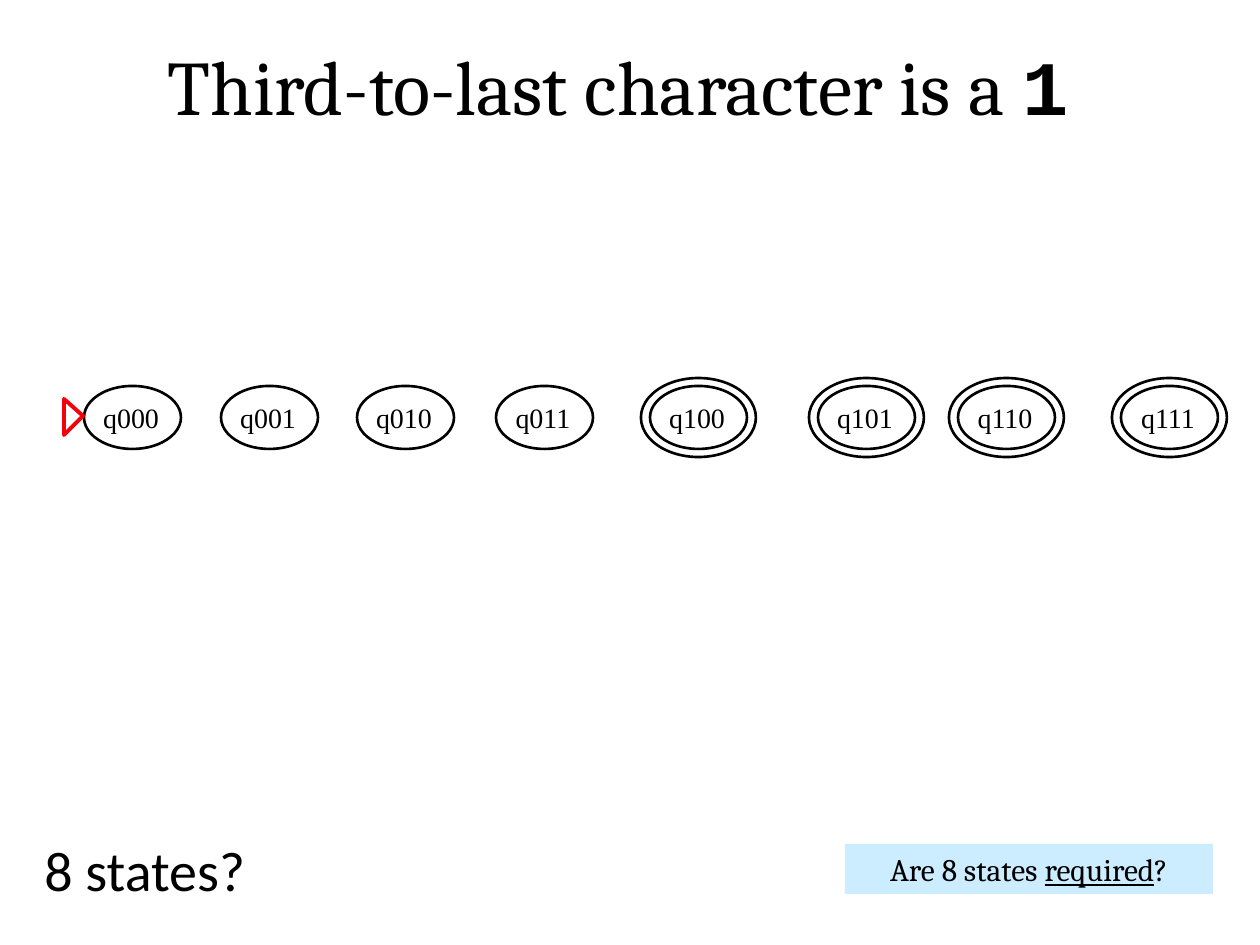
from dataclasses import dataclass

from pptx import Presentation
from pptx.dml.color import RGBColor
from pptx.enum.shapes import MSO_SHAPE
from pptx.enum.text import MSO_ANCHOR, PP_ALIGN
from pptx.util import Emu, Pt

PX = 914400 // 126


@dataclass(frozen=True)
class Theme:
    ink: str = "000000"
    start: str = "F3020A"
    callout: str = "CCECFF"
    serif: str = "Cambria"
    sans: str = "Calibri"
    mono: str = "Courier New"
    state_font: str = "Times New Roman"
    title_size: int = 44
    remark_size: int = 32
    callout_size: int = 18
    state_size: int = 16
    line: float = 1.5
    start_line: float = 2.25


THEME = Theme()

TITLE = [("Third-to-last character is a ", {}),
         ("1", {"font": THEME.mono, "bold": True})]
REMARK = [("8 states?", {})]
QUESTION = [("Are 8 states ", {}), ("required", {"underline": True}), ("?", {})]

# state bits and left edge of the ellipse; states starting with 1 accept
STATES = [("000", 84), ("001", 221), ("010", 357), ("011", 496),
          ("100", 650), ("101", 818), ("110", 958), ("111", 1121)]
STATE_TOP, STATE_WIDTH, STATE_HEIGHT = 386, 97, 63
RING_X, RING_Y = 9, 8
LABEL_INSET, LABEL_WIDTH, LABEL_HEIGHT = 6, 82, 47
START_MARK = [(64, 399), (64, 435), (83, 416)]


def px(*lengths):
    return [Emu(length * PX) for length in lengths]


def write(shape, runs, font, size, align=PP_ALIGN.CENTER,
          anchor=MSO_ANCHOR.TOP, wrap=True):
    frame = shape.text_frame
    frame.word_wrap = wrap
    frame.vertical_anchor = anchor
    paragraph = frame.paragraphs[0]
    paragraph.alignment = align
    for text, style in runs:
        run = paragraph.add_run()
        run.text = text
        run.font.name = style.get("font", font)
        run.font.size = Pt(size)
        run.font.bold = style.get("bold", False)
        run.font.underline = style.get("underline", False)
        run.font.color.rgb = RGBColor.from_string(THEME.ink)


def outline(shape, color, width):
    shape.shadow.inherit = False
    shape.fill.background()
    shape.line.color.rgb = RGBColor.from_string(color)
    shape.line.width = Pt(width)


def add_ellipse(shapes, *box):
    ellipse = shapes.add_shape(MSO_SHAPE.OVAL, *px(*box))
    outline(ellipse, THEME.ink, THEME.line)


def add_state(shapes, bits, left):
    add_ellipse(shapes, left, STATE_TOP, STATE_WIDTH, STATE_HEIGHT)
    label_top = STATE_TOP + (STATE_HEIGHT - LABEL_HEIGHT) // 2
    label = shapes.add_textbox(
        *px(left + LABEL_INSET, label_top, LABEL_WIDTH, LABEL_HEIGHT))
    write(label, [("q" + bits, {})], THEME.state_font, THEME.state_size,
          anchor=MSO_ANCHOR.MIDDLE, wrap=False)
    if bits.startswith("1"):
        add_ellipse(shapes, left - RING_X, STATE_TOP - RING_Y,
                    STATE_WIDTH + 2 * RING_X, STATE_HEIGHT + 2 * RING_Y)


def main():
    presentation = Presentation()
    presentation.slide_width, presentation.slide_height = px(1260, 945)
    shapes = presentation.slides.add_slide(presentation.slide_layouts[6]).shapes

    title = shapes.add_textbox(*px(65, 32, 1106, 105))
    write(title, TITLE, THEME.serif, THEME.title_size)

    for bits, left in STATES:
        add_state(shapes, bits, left)

    builder = shapes.build_freeform(*START_MARK[0], scale=PX)
    builder.add_line_segments(START_MARK[1:], close=True)
    outline(builder.convert_to_shape(), THEME.start, THEME.start_line)

    remark = shapes.add_textbox(*px(32, 829, 640, 79))
    write(remark, REMARK, THEME.sans, THEME.remark_size, align=PP_ALIGN.LEFT)

    callout = shapes.add_shape(MSO_SHAPE.RECTANGLE, *px(845, 844, 368, 50))
    callout.shadow.inherit = False
    callout.fill.solid()
    callout.fill.fore_color.rgb = RGBColor.from_string(THEME.callout)
    callout.line.fill.background()
    write(callout, QUESTION, THEME.serif, THEME.callout_size)

    presentation.save("out.pptx")


if __name__ == "__main__":
    main()
